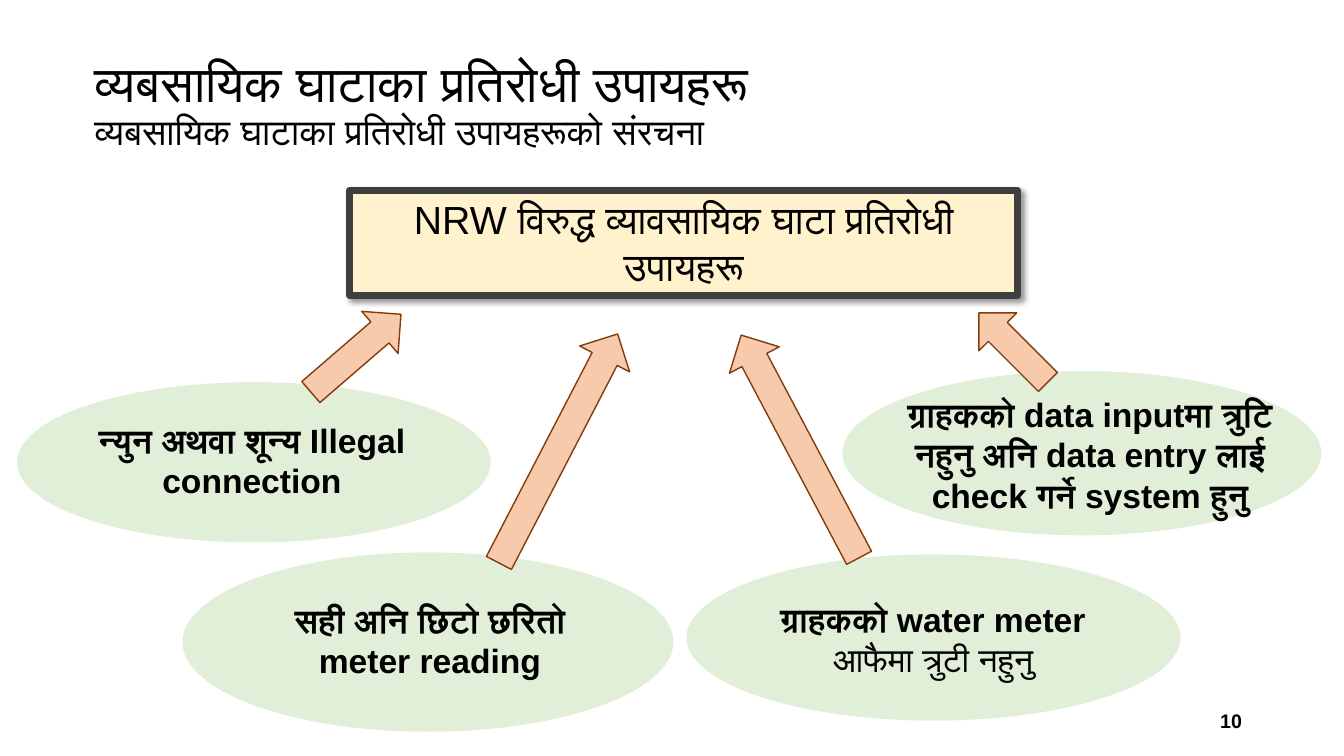
from lxml import etree
from pptx import Presentation
from pptx import util as u
from pptx.dml.color import RGBColor
from pptx.enum import shapes, text
from pptx.oxml.ns import qn

FONT = "Arial"
COLORS = {
    "text": "000000",
    "oval": "E1EFD8",
    "box": "FFF2CC",
    "box_line": "3F3F3F",
    "arrow": "F7CAAC",
    "arrow_line": "833C0B",
}

# oval place, label place, label lines as (wording, bold)
MEASURES = [
    ((17.3, 13.97, 12.45, 4.19), (18.06, 14.96, 10.9, 2.31),
     [("ग्राहकको water meter", True), ("आफैमा त्रुटी नहुनु", False)]),
    ((4.6, 13.92, 12.37, 4.52), (5.97, 14.99, 9.73, 2.31),
     [("सही अनि छिटो छरितो meter reading", True)]),
    ((0.43, 9.63, 11.94, 4.04), (1.65, 10.46, 9.4, 2.31),
     [("न्युन अथवा शून्य Illegal connection", True)]),
    ((21.23, 9.35, 12.07, 4.14), (22.25, 9.8, 10.44, 3.33),
     [("ग्राहकको data inputमा त्रुटि नहुनु अनि data entry लाई "
       "check गर्ने system हुनु", True)]),
]

# arrow place, rotation in degrees
ARROWS = [
    ((7.47, 8.2, 3, 1.4), 319.2),
    ((24.31, 8.08, 2.46, 1.35), 225),
    ((10.82, 10.59, 6.5, 1.42), 297.4),
    ((16.99, 10.54, 6.35, 1.42), 242.1),
]


def cm(place):
    return [u.Cm(length) for length in place]


def color(name):
    return RGBColor.from_string(COLORS[name])


def style_span(span, size, bold=False):
    """Format a run, for Latin and Devanagari letters alike."""
    span.font.size = u.Pt(size)
    span.font.bold = bold
    span.font.name = FONT
    span.font.color.rgb = color("text")
    etree.SubElement(span.font._element, qn("a:cs"), typeface=FONT)


def write_lines(frame, lines, size, align):
    """Fill a text frame with one paragraph for each (wording, bold) pair."""
    frame.word_wrap = True
    for index, (wording, bold) in enumerate(lines):
        para = frame.add_paragraph() if index else frame.paragraphs[0]
        para.text = wording
        para.alignment = align
        for span in para.runs:
            style_span(span, size, bold)


def add_label(slide, place, lines, size, align=text.PP_ALIGN.CENTER,
              anchor=text.MSO_ANCHOR.TOP):
    frame = slide.shapes.add_textbox(*cm(place)).text_frame
    write_lines(frame, lines, size, align)
    frame.vertical_anchor = anchor
    return frame


def add_figure(slide, kind, place, fill, line=None, width=1):
    figure = slide.shapes.add_shape(kind, *cm(place))
    figure.shadow.inherit = False
    figure.fill.solid()
    figure.fill.fore_color.rgb = color(fill)
    if line:
        figure.line.color.rgb = color(line)
        figure.line.width = u.Pt(width)
    else:
        figure.line.fill.background()
    return figure


def add_shadow(figure):
    effects = figure._element.spPr.find(qn("a:effectLst"))
    shadow = etree.SubElement(
        effects, qn("a:outerShdw"), blurRad=str(u.Pt(4)), dist=str(u.Pt(3)),
        dir=str(45 * 60000), algn="tl", rotWithShape="0")
    tint = etree.SubElement(shadow, qn("a:srgbClr"), val=COLORS["text"])
    etree.SubElement(tint, qn("a:alpha"), val="40000")


def add_title(slide):
    frame = add_label(
        slide, (2.13, 0.66, 30.56, 4.04),
        [("व्यबसायिक घाटाका प्रतिरोधी उपायहरू\v"
          "व्यबसायिक घाटाका प्रतिरोधी उपायहरूको संरचना", False)],
        36, text.PP_ALIGN.LEFT, text.MSO_ANCHOR.MIDDLE)
    para = frame.paragraphs[0]
    para.line_spacing = 0.9
    para.runs[1].font.size = u.Pt(26)


def add_goal_box(slide):
    box = add_figure(slide, shapes.MSO_SHAPE.RECTANGLE,
                     (8.81, 4.8, 16.84, 2.64), "box", "box_line", 5)
    etree.SubElement(box.line._get_or_add_ln(), qn("a:round"))
    add_shadow(box)
    box.text_frame.vertical_anchor = text.MSO_ANCHOR.TOP
    write_lines(box.text_frame,
                [("NRW विरुद्ध व्यावसायिक घाटा प्रतिरोधी उपायहरू", False)],
                28, text.PP_ALIGN.CENTER)


def main():
    deck = Presentation()
    deck.slide_width, deck.slide_height = u.Cm(33.87), u.Cm(19.05)
    slide = deck.slides.add_slide(deck.slide_layouts[6])

    add_title(slide)
    add_label(slide, (23.93, 17.65, 7.62, 1.02), [("10", True)], 14,
              text.PP_ALIGN.RIGHT, text.MSO_ANCHOR.MIDDLE)
    add_goal_box(slide)
    for oval_place, label_place, lines in MEASURES:
        add_figure(slide, shapes.MSO_SHAPE.OVAL, oval_place, "oval")
        add_label(slide, label_place, lines, 24)
    for place, angle in ARROWS:
        arrow = add_figure(slide, shapes.MSO_SHAPE.RIGHT_ARROW, place,
                           "arrow", "arrow_line")
        arrow.rotation = angle

    deck.save("out.pptx")


if __name__ == "__main__":
    main()
